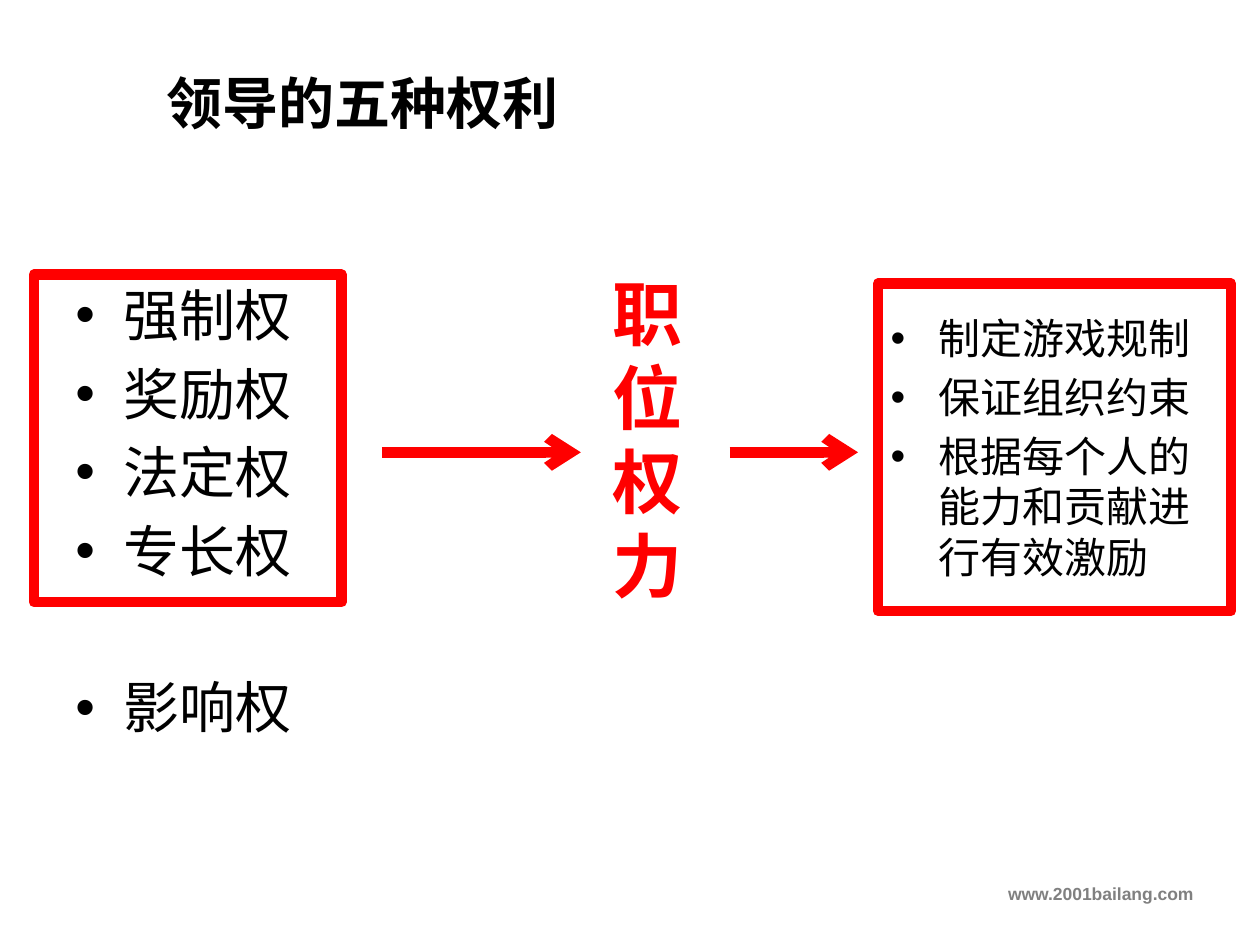
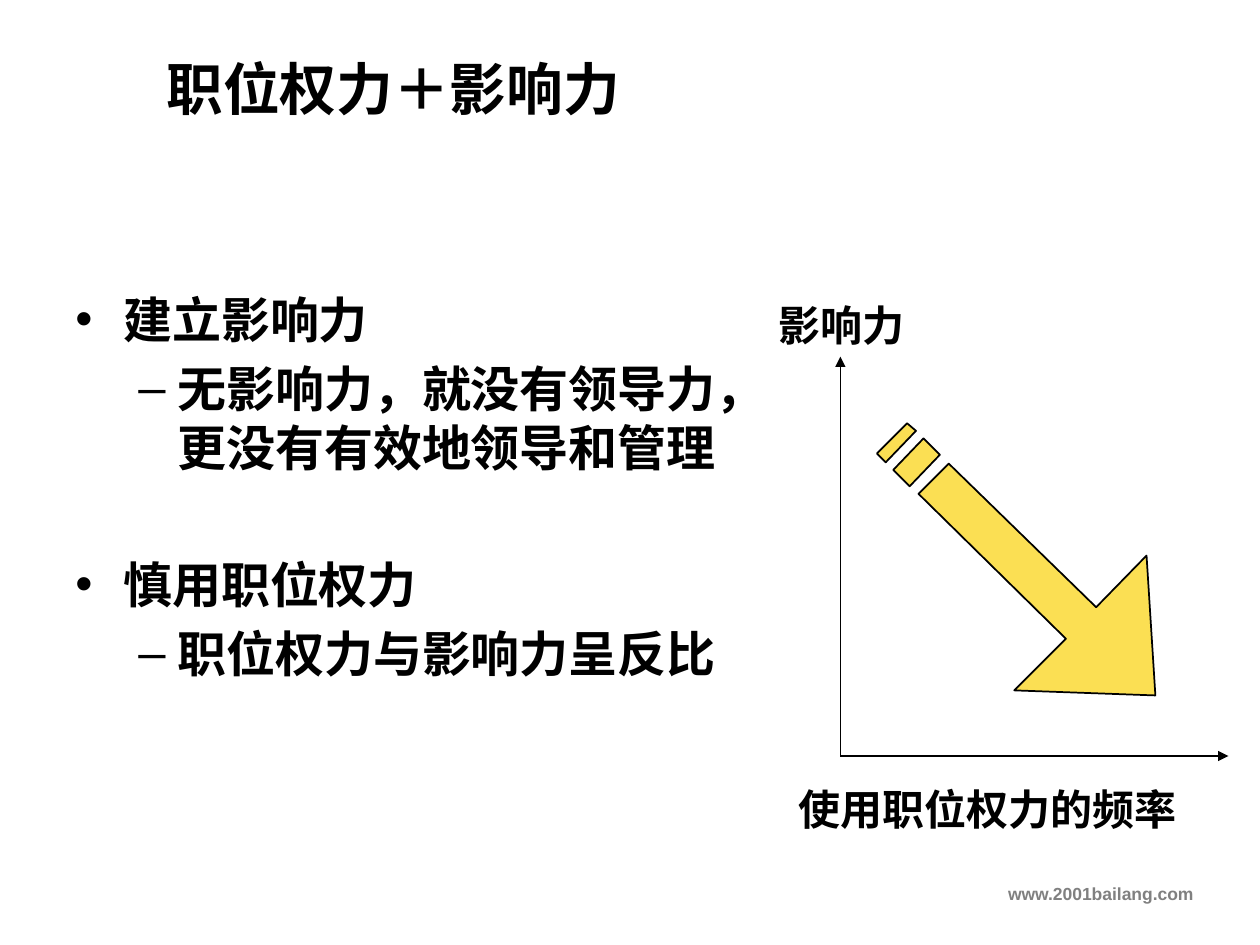
from lxml import etree
from pptx import Presentation
from pptx.dml.color import RGBColor
from pptx.enum.shapes import MSO_CONNECTOR, MSO_SHAPE
from pptx.enum.text import MSO_ANCHOR, MSO_AUTO_SIZE, PP_ALIGN
from pptx.oxml.ns import qn
from pptx.util import Inches, Pt

RECT = MSO_SHAPE.RECTANGLE
STRAIGHT = MSO_CONNECTOR.STRAIGHT
LEFT, CENTER, RIGHT = PP_ALIGN.LEFT, PP_ALIGN.CENTER, PP_ALIGN.RIGHT
TOP, MIDDLE = MSO_ANCHOR.TOP, MSO_ANCHOR.MIDDLE
FIXED = MSO_AUTO_SIZE.NONE

BLACK, RED, GRAY, YELLOW = "000000", "FF0000", "808080", "FBDF53"
SANS, SERIF = "Arial", "Times New Roman"
LEVELS = [("•", 0.38, 0.38), ("–", 0.81, 0.31)]
ARROW = [
    [(9.1, 4.41), (8.7, 4.82), (7.53, 3.68), (7.29, 3.92),
     (8.46, 5.07), (8.05, 5.48), (9.17, 5.52)],
    [(7.33, 3.48), (7.09, 3.73), (7.22, 3.86), (7.46, 3.61)],
    [(7.2, 3.36), (6.96, 3.6), (7.03, 3.67), (7.27, 3.42)],
]


def rgb(code):
    return RGBColor.from_string(code)


def place(shape, box):
    shape.left, shape.top, shape.width, shape.height = map(Inches, box)


def style(para, size, color=BLACK, bold=False, font=SANS, align=LEFT):
    para.alignment = align
    para.font.size = Pt(size)
    para.font.name = font
    para.font.bold = bold
    para.font.color.rgb = rgb(color)


def mark(para, level):
    sign, left, hang = LEVELS[level]
    props = para._p.get_or_add_pPr()
    props.set("marL", str(Inches(left)))
    props.set("indent", str(-Inches(hang)))
    etree.SubElement(props, qn("a:buFont"), typeface=SANS)
    etree.SubElement(props, qn("a:buChar"), char=sign)


def setup(frame, anchor=TOP):
    frame.word_wrap = True
    frame.auto_size = FIXED
    frame.vertical_anchor = anchor


def fill_lines(frame, lines, *look, **more):
    for i, line in enumerate(lines):
        para = frame.paragraphs[0] if i == 0 else frame.add_paragraph()
        para.text = line
        style(para, *look, **more)


def fill_list(frame, items, size, bold=False, gap=None):
    for i, (level, text) in enumerate(items):
        para = frame.paragraphs[0] if i == 0 else frame.add_paragraph()
        para.text = text
        if i:
            para.space_before = Pt(size * 0.2)
        if gap and i == gap[0]:
            para.space_before = Pt(gap[1])
        mark(para, level)
        style(para, size, bold=bold)


def add_box(slide, box):
    frame = slide.shapes.add_textbox(*map(Inches, box)).text_frame
    setup(frame)
    return frame


def add_label(slide, box, lines, *look, **more):
    fill_lines(add_box(slide, box), lines, *look, **more)


def add_frame(slide, box):
    shape = slide.shapes.add_shape(RECT, *map(Inches, box))
    shape.shadow.inherit = False
    shape.fill.background()
    shape.line.color.rgb = rgb(RED)
    shape.line.width = Pt(6)
    etree.SubElement(shape.line._get_or_add_ln(), qn("a:round"))
    setup(shape.text_frame, MIDDLE)
    return shape.text_frame


def add_arrow(slide, start, end, color, width, head):
    line = slide.shapes.add_connector(STRAIGHT, *map(Inches, start + end))
    line.line.color.rgb = rgb(color)
    line.line.width = Pt(width)
    etree.SubElement(line.line._get_or_add_ln(), qn("a:tailEnd"), type=head)
    etree.SubElement(line._element.spPr, qn("a:effectLst"))


def add_stripes(slide, parts):
    paths = [[(Inches(x), Inches(y)) for x, y in part] for part in parts]
    pen = slide.shapes.build_freeform(*paths[0][0])
    for i, path in enumerate(paths):
        if i:
            pen.move_to(*path[0])
        pen.add_line_segments(path[1:], close=True)
    shape = pen.convert_to_shape()
    shape.shadow.inherit = False
    shape.fill.solid()
    shape.fill.fore_color.rgb = rgb(YELLOW)
    shape.line.color.rgb = rgb(BLACK)
    shape.line.width = Pt(1)


def add_slide(deck, title, box, size):
    slide = deck.slides.add_slide(deck.slide_layouts[5])
    head = slide.shapes.title
    place(head, box)
    setup(head.text_frame, MIDDLE)
    fill_lines(head.text_frame, [title], size, bold=True)
    add_label(slide, (0, 6.96, 9.57, 0.35), ["www.2001bailang.com"],
              10, GRAY, True, align=RIGHT)
    return slide


def draw_powers(deck):
    slide = add_slide(deck, "领导的五种权利", (1.22, 0.5, 6.77, 0.62), 32)
    powers = ["强制权", "奖励权", "法定权", "专长权", "影响权"]
    fill_list(add_box(slide, (0.5, 2.18, 2.37, 4.52)),
              [(0, name) for name in powers], 32, gap=(4, 51.2))
    add_frame(slide, (0.27, 2.18, 2.44, 2.6))
    add_label(slide, (4.76, 2.1, 0.86, 2.8), "职位权力", 40, RED, True)
    for left, right in [(3.03, 4.61), (5.79, 6.81)]:
        add_arrow(slide, (left, 3.59), (right, 3.59), RED, 6, "arrow")
    uses = ["制定游戏规制", "保证组织约束", "根据每个人的能力和贡献进行有效激励"]
    fill_list(add_frame(slide, (6.97, 2.25, 2.8, 2.6)),
              [(0, use) for use in uses], 24)


def draw_balance(deck):
    slide = add_slide(deck, "职位权力＋影响力", (1.22, 0.38, 8.28, 0.63), 32.4)
    points = [
        (0, "建立影响力"),
        (1, "无影响力，就没有领导力，更没有有效地领导和管理"),
        (0, "慎用职位权力"),
        (1, "职位权力与影响力呈反比"),
    ]
    fill_list(add_box(slide, (0.5, 2.25, 5.74, 4.66)), points, 28, True,
              gap=(2, 44.8))
    for end in [(9.75, 6), (6.67, 2.83)]:
        add_arrow(slide, (6.67, 6), end, BLACK, 1, "triangle")
    add_stripes(slide, ARROW)
    add_label(slide, (6.08, 2.33, 1.42, 0.5), ["影响力"],
              24, bold=True, font=SERIF)
    add_label(slide, (6.02, 6.17, 3.64, 0.5), ["使用职位权力的频率"],
              24, bold=True, font=SERIF, align=CENTER)


def main():
    deck = Presentation()
    deck.slide_width, deck.slide_height = Inches(10), Inches(7.5)
    draw_powers(deck)
    draw_balance(deck)
    deck.save("out.pptx")


if __name__ == "__main__":
    main()
